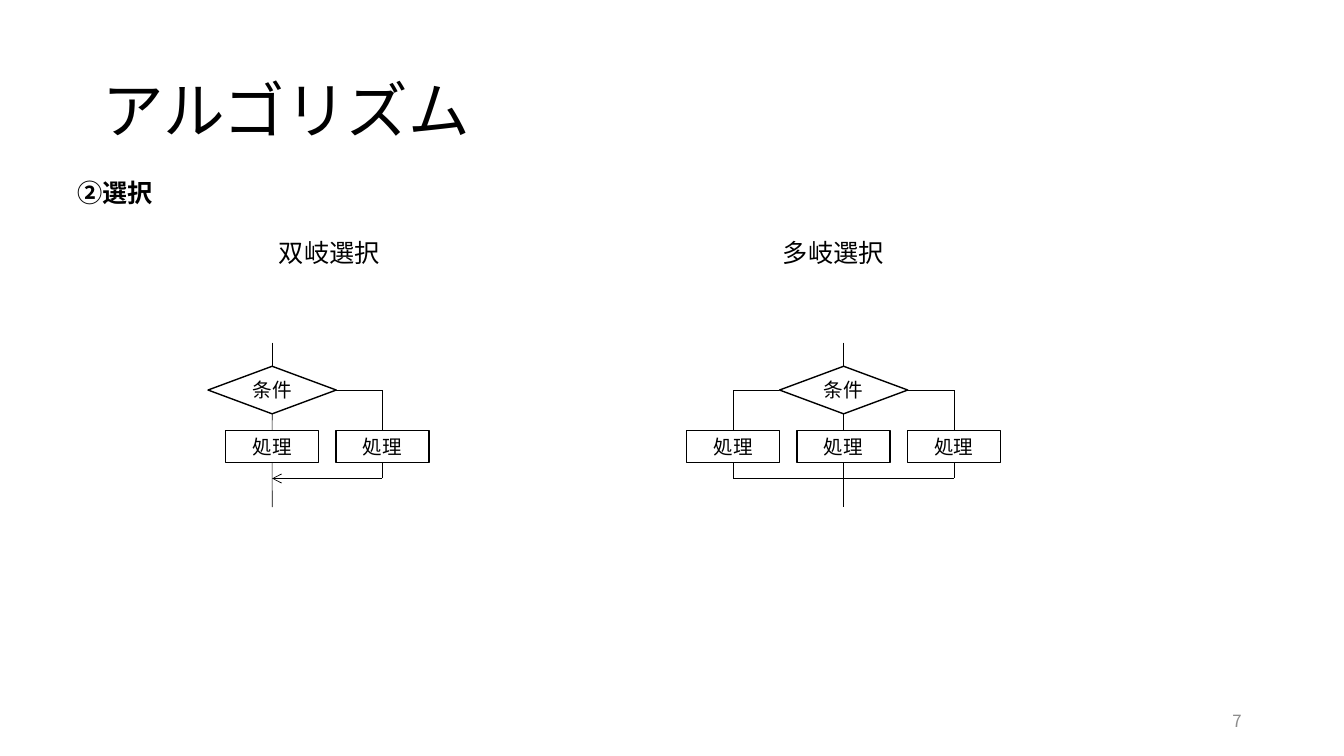
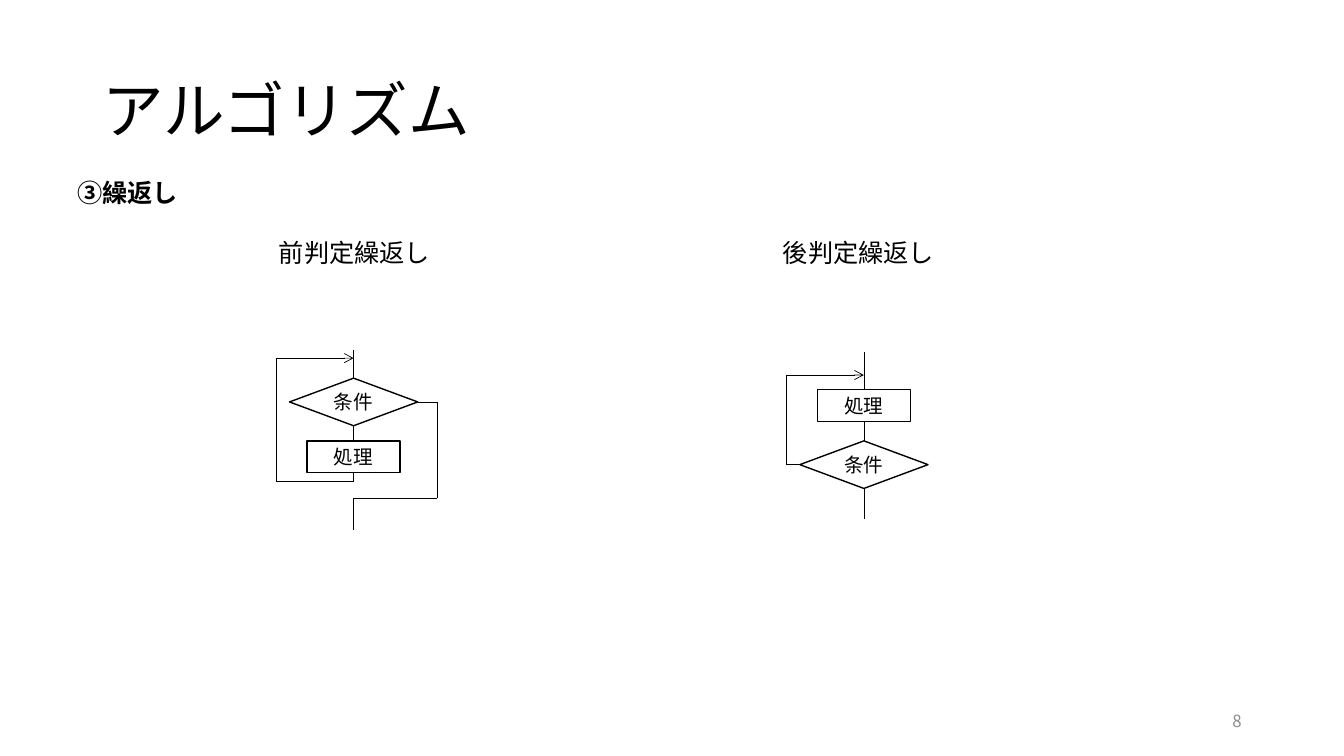
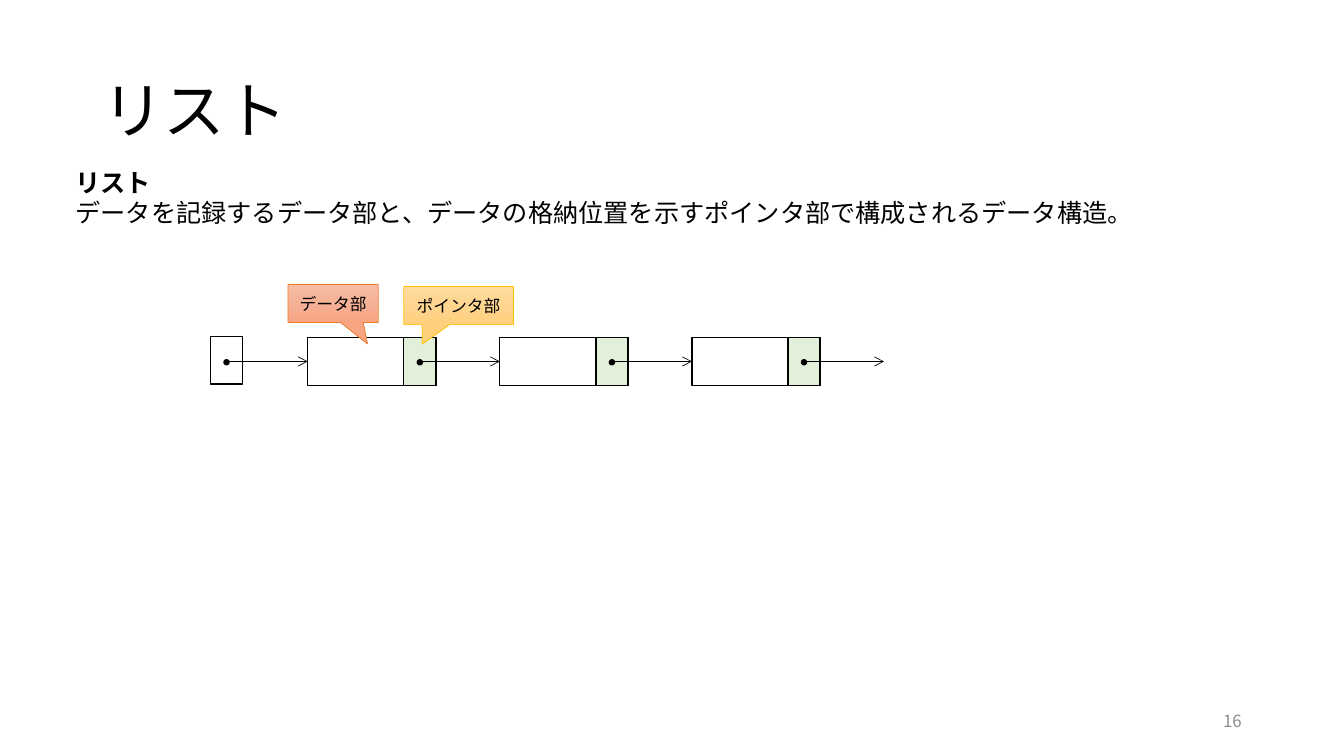
from collections import namedtuple
from copy import deepcopy

from lxml.etree import SubElement
from pptx import Presentation
from pptx.dml.color import RGBColor
from pptx.enum.shapes import MSO_CONNECTOR, MSO_SHAPE as SHAPE
from pptx.enum.text import MSO_ANCHOR as ANCHOR, PP_ALIGN as ALIGN
from pptx.oxml.ns import qn
from pptx.util import Pt

# Shared style
BLACK = RGBColor(0x00, 0x00, 0x00)
WHITE = RGBColor(0xFF, 0xFF, 0xFF)
GRAY = RGBColor(0x8C, 0x8C, 0x8C)
GREEN = RGBColor(0xE2, 0xF0, 0xD9)
ORANGE = RGBColor(0xED, 0x7D, 0x31)
GOLD = RGBColor(0xFF, 0xC0, 0x00)
ORANGE_SHADES = [RGBColor(0xF7, 0xBD, 0xA5), RGBColor(0xF5, 0xB1, 0x96),
                 RGBColor(0xF8, 0xA5, 0x82)]
GOLD_SHADES = [RGBColor(0xFF, 0xDB, 0x9E), RGBColor(0xFF, 0xD5, 0x90),
               RGBColor(0xFF, 0xD0, 0x7C)]
FONT = "Noto Sans CJK JP"
LATIN_FONT = "Arial"

# Flowchart and list measures
PROCESS_SIZE = (66.4, 22.6)
DECISION_SIZE = (91.6, 34)
BRANCH_PITCH = 78.8
NODE_WIDTH, NODE_HEIGHT, NODE_PITCH = 91.6, 34, 137.2
POINTER_WIDTH = 23
DOT_SIZE = 3.6

# Connection sites of a rectangle or decision
TOP, LEFT, BOTTOM, RIGHT = range(4)
Joint = namedtuple("Joint", "shape site")


# Text
def style_paragraph(paragraph, size, color=BLACK, bold=False, align=None,
                    latin=FONT):
    paragraph.alignment = align
    for run in paragraph.runs:
        font = run.font
        font.size, font.bold, font.name = Pt(size), bold, latin
        font.color.rgb = color
        SubElement(run._r.rPr, qn("a:ea"), typeface=FONT)


def add_text(slide, box, lines, anchor=ANCHOR.TOP):
    text_frame = slide.shapes.add_textbox(*map(Pt, box)).text_frame
    text_frame.word_wrap = True
    text_frame.vertical_anchor = anchor
    text_frame.text = "\n".join(lines)
    return text_frame.paragraphs


def add_base_slide(presentation, title, number):
    slide = presentation.slides.add_slide(presentation.slide_layouts[6])
    heading, = add_text(slide, (66, 28.8, 828, 104.4), [title], ANCHOR.MIDDLE)
    heading.line_spacing = 0.9
    style_paragraph(heading, 44)
    footer, = add_text(slide, (678, 500.4, 216, 28.8), [number], ANCHOR.MIDDLE)
    style_paragraph(footer, 12, GRAY, align=ALIGN.RIGHT)
    return slide


def add_section(slide, heading, left_label, right_label):
    section, labels = add_text(slide, (48.2, 123.1, 863.3, 72.7),
                               [heading, f"\t{left_label}\t{right_label}"])
    style_paragraph(section, 18, bold=True, latin=LATIN_FONT)
    style_paragraph(labels, 18, latin=LATIN_FONT)
    labels.space_before = Pt(21.5)
    tab_list = SubElement(labels._p.get_or_add_pPr(), qn("a:tabLst"))
    for position in (144, 504):
        SubElement(tab_list, qn("a:tab"), pos=str(Pt(position)), algn="l")


# Shapes and lines
def add_block(slide, kind, box, fill=WHITE, text="", size=14, line=BLACK,
              line_width=1):
    shape = slide.shapes.add_shape(kind, *map(Pt, box))
    shape.shadow.inherit = False
    shape.fill.solid()
    shape.fill.fore_color.rgb = fill
    shape.line.color.rgb = line
    shape.line.width = Pt(line_width)
    if text:
        shape.text_frame.text = text
        shape.text_frame.vertical_anchor = ANCHOR.MIDDLE
        style_paragraph(shape.text_frame.paragraphs[0], size,
                        align=ALIGN.CENTER)
    return shape


def add_centered(slide, kind, center, size, text=""):
    (x, y), (width, height) = center, size
    box = (x - width / 2, y - height / 2, width, height)
    return add_block(slide, kind, box, text=text)


def add_process(slide, x, y):
    return add_centered(slide, SHAPE.RECTANGLE, (x, y), PROCESS_SIZE, "処理")


def add_decision(slide, x, y):
    return add_centered(slide, SHAPE.FLOWCHART_DECISION, (x, y),
                        DECISION_SIZE, "条件")


def locate(stop):
    """Point of a stop, which is a Joint or an (x, y) pair."""
    if not isinstance(stop, Joint):
        return stop
    shape, site = stop
    across = {LEFT: 0, RIGHT: 1}.get(site, 0.5)
    down = {TOP: 0, BOTTOM: 1}.get(site, 0.5)
    return ((shape.left + across * shape.width) / Pt(1),
            (shape.top + down * shape.height) / Pt(1))


def add_route(slide, *stops, arrow=False):
    """Straight connectors from stop to stop, with an optional last arrow."""
    for start, end in zip(stops, stops[1:]):
        connector = slide.shapes.add_connector(
            MSO_CONNECTOR.STRAIGHT, *map(Pt, (*locate(start), *locate(end))))
        connector.line.color.rgb = BLACK
        connector.line.width = Pt(0.5)
        SubElement(connector._element.spPr, qn("a:effectLst"))
        if isinstance(start, Joint):
            connector.begin_connect(*start)
        if isinstance(end, Joint):
            connector.end_connect(*end)
    if arrow:
        SubElement(connector.line._get_or_add_ln(), qn("a:tailEnd"),
                   type="arrow")


def add_callout(slide, box, text, tip, shades, line):
    callout = add_block(slide, SHAPE.RECTANGULAR_CALLOUT, box, text=text,
                        size=12, line=line, line_width=0.5)
    for index, value in enumerate(tip):
        callout.adjustments[index] = value
    fill = callout.fill
    fill.gradient()
    fill.gradient_angle = 270
    stop_list = callout._element.spPr.find(".//" + qn("a:gsLst"))
    stop_list.insert(1, deepcopy(stop_list[0]))
    for stop, position, shade in zip(fill.gradient_stops, (0, 0.5, 1), shades):
        stop.position = position
        stop.color.rgb = shade


# Diagrams
def add_selection(slide, axis, sides, arrow=False):
    """Decision with one process per side: -1 left, 0 middle, 1 right."""
    test_y, process_y, merge_y = 278.6, 318.9, 341.8
    decision = add_decision(slide, axis, test_y)
    add_route(slide, (axis, 244.8), Joint(decision, TOP))
    columns = [axis + side * BRANCH_PITCH for side in sides]
    for side, x in zip(sides, columns):
        process = add_process(slide, x, process_y)
        if side:
            exit_site = RIGHT if side > 0 else LEFT
            add_route(slide, Joint(decision, exit_site), (x, test_y),
                      Joint(process, TOP))
        else:
            add_route(slide, Joint(decision, BOTTOM), Joint(process, TOP))
        add_route(slide, Joint(process, BOTTOM),
                  (x, merge_y if side else 362.2))
    add_route(slide, (columns[-1], merge_y), (columns[0], merge_y),
              arrow=arrow)


def add_pretest_loop(slide, axis):
    test_y, return_y, exit_y, entry_y = 287.1, 344.2, 355.7, 255.8
    return_x, exit_x = axis - 55, axis + 59.8
    decision = add_decision(slide, axis, test_y)
    process = add_process(slide, axis, 326.2)
    add_route(slide, (axis, 249.8), Joint(decision, TOP))
    add_route(slide, Joint(decision, BOTTOM), Joint(process, TOP))
    add_route(slide, Joint(process, BOTTOM), (axis, return_y),
              (return_x, return_y), (return_x, entry_y), (axis, entry_y),
              arrow=True)
    add_route(slide, Joint(decision, RIGHT), (exit_x, test_y),
              (exit_x, exit_y), (axis, exit_y), (axis, 378.4))


def add_posttest_loop(slide, axis):
    test_y, entry_y, return_x = 331.9, 267.9, axis - 55.5
    process = add_process(slide, axis, 289.6)
    decision = add_decision(slide, axis, test_y)
    add_route(slide, (axis, 251.3), Joint(process, TOP))
    add_route(slide, Joint(process, BOTTOM), Joint(decision, TOP))
    add_route(slide, Joint(decision, BOTTOM), (axis, 370.8))
    add_route(slide, Joint(decision, LEFT), (return_x, test_y),
              (return_x, entry_y), (axis, entry_y), arrow=True)


def add_linked_list(slide, left, top, count):
    head_left = 150.3
    add_block(slide, SHAPE.RECTANGLE,
              (head_left, top - 0.9, POINTER_WIDTH, NODE_HEIGHT))
    pointer_centers = [head_left + POINTER_WIDTH / 2]
    targets = []
    for index in range(count):
        node_left = left + index * NODE_PITCH
        pointer_left = node_left + NODE_WIDTH - POINTER_WIDTH
        node = add_block(slide, SHAPE.RECTANGLE,
                         (node_left, top, NODE_WIDTH, NODE_HEIGHT))
        add_block(slide, SHAPE.RECTANGLE,
                  (pointer_left, top, POINTER_WIDTH, NODE_HEIGHT), GREEN)
        pointer_centers.append(pointer_left + POINTER_WIDTH / 2)
        targets.append(Joint(node, LEFT))
    middle = top + NODE_HEIGHT / 2
    targets.append((left + count * NODE_PITCH, middle))
    for x, target in zip(pointer_centers, targets):
        add_route(slide, (x, middle), target, arrow=True)
        dot = add_centered(slide, SHAPE.OVAL, (x, middle + 0.6),
                           (DOT_SIZE, DOT_SIZE))
        dot.fill.fore_color.rgb = BLACK


# Slides
def build_selection_slide(presentation):
    slide = add_base_slide(presentation, "アルゴリズム", "7")
    add_section(slide, "②選択", "双岐選択", "多岐選択")
    add_selection(slide, 194.4, (0, 1), arrow=True)
    add_selection(slide, 602.6, (-1, 0, 1))


def build_loop_slide(presentation):
    slide = add_base_slide(presentation, "アルゴリズム", "8")
    add_section(slide, "③繰返し", "前判定繰返し", "後判定繰返し")
    add_pretest_loop(slide, 252.6)
    add_posttest_loop(slide, 617.1)


def build_list_slide(presentation):
    slide = add_base_slide(presentation, "リスト", "16")
    term, meaning = add_text(slide, (46.8, 115.9, 863.3, 60), [
        "リスト",
        "データを記録するデータ部と、データの格納位置を示すポインタ部で"
        "構成されるデータ構造。"])
    style_paragraph(term, 18, bold=True)
    style_paragraph(meaning, 18)
    add_linked_list(slide, 219.8, 241.2, 3)
    add_callout(slide, (288.4, 204.7, 78.4, 27.2), "ポインタ部",
                (-0.33, 1.01), GOLD_SHADES, GOLD)
    add_callout(slide, (205.8, 203.2, 64.4, 27.2), "データ部",
                (0.38, 1.06), ORANGE_SHADES, ORANGE)


def main():
    presentation = Presentation()
    presentation.slide_width, presentation.slide_height = Pt(960), Pt(540)
    build_selection_slide(presentation)
    build_loop_slide(presentation)
    build_list_slide(presentation)
    presentation.save("out.pptx")


if __name__ == "__main__":
    main()
